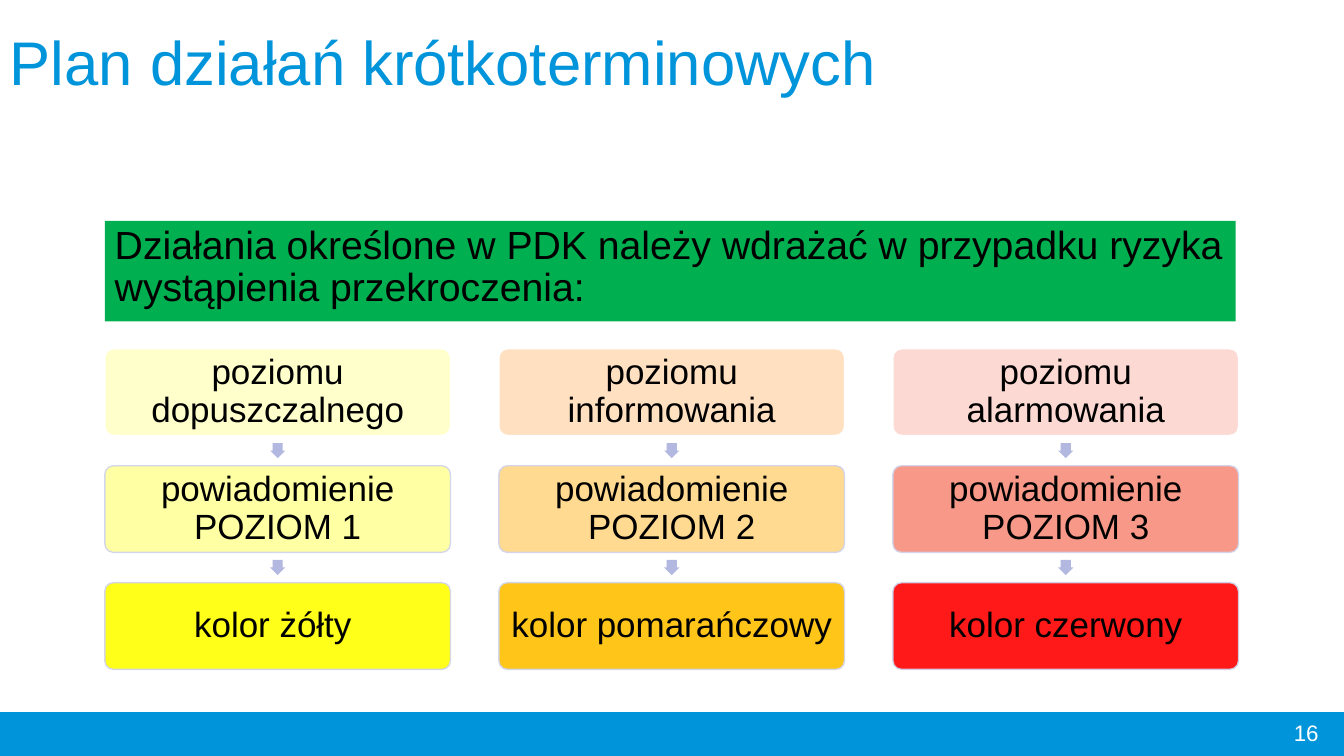
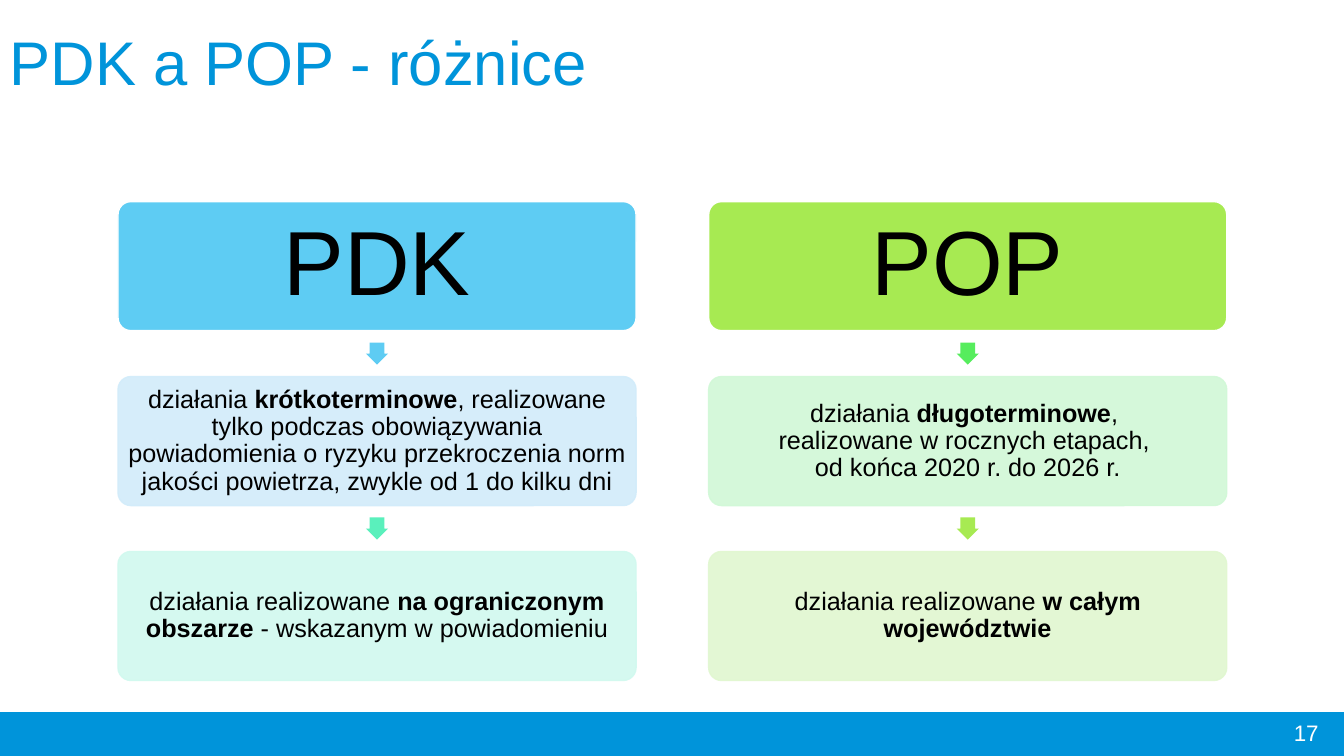
from lxml.etree import SubElement
from pptx import Presentation
from pptx.dml.color import RGBColor
from pptx.enum.shapes import MSO_SHAPE
from pptx.enum.text import MSO_ANCHOR, PP_ALIGN
from pptx.oxml.ns import qn
from pptx.util import Inches, Pt

BLUE, BLACK, WHITE = "0094DA", "000000", "FFFFFF"
GREEN, LILAC, PALE_LILAC = "00B050", "B2B8E0", "D0D3EB"


def rgb(color):
    return RGBColor.from_string(color)


def paint(color_format, color, alpha=100):
    """Colour a solid fill, with its opacity in percent."""
    color_format.fore_color.rgb = rgb(color)
    if alpha < 100:
        clr = color_format.fore_color._xFill.find(qn("a:srgbClr"))
        SubElement(clr, qn("a:alpha"), val=str(alpha * 1000))


def write(sp, text, size, color=BLACK, align=PP_ALIGN.LEFT,
          anchor=MSO_ANCHOR.MIDDLE, spacing=0.9, inset=None):
    """Write one paragraph; ** switches bold on and off, \n breaks the line."""
    tf = sp.text_frame
    tf.word_wrap = True
    tf.vertical_anchor = anchor
    if inset is not None:
        tf.margin_left = tf.margin_right = Inches(inset)
        tf.margin_top = tf.margin_bottom = Inches(inset)
    p = tf.paragraphs[0]
    p.alignment = align
    p.line_spacing = spacing
    for i, part in enumerate(text.split("**")):
        for j, line in enumerate(part.split("\n")):
            if j:
                p.add_line_break()
            if line:
                r = p.add_run()
                r.text = line
                r.font.name = "Arial"
                r.font.size = Pt(size)
                r.font.bold = i % 2 == 1
                r.font.color.rgb = rgb(color)


class Deck:
    """Shared style and current slide; lengths are percent of the slide."""

    def __init__(self):
        self.prs = Presentation()
        self.prs.slide_width = Inches(13.333)
        self.prs.slide_height = Inches(7.5)
        self.s = None

    def box(self, x, y, w, h):
        width, height = self.prs.slide_width, self.prs.slide_height
        return [round(share * side / 100) for share, side in
                zip((x, y, w, h), (width, height, width, height))]

    def shape(self, kind, box, fill, line=None, alpha=100):
        sp = self.s.shapes.add_shape(kind, *box)
        sp.shadow.inherit = False
        sp.fill.solid()
        paint(sp.fill, fill, alpha)
        if line:
            sp.line.width = Pt(1)
            sp.line.fill.solid()
            paint(sp.line.fill, line, alpha)
        else:
            sp.line.fill.background()
        return sp

    def text(self, box, text, size, **fmt):
        write(self.s.shapes.add_textbox(*box), text, size, **fmt)

    def slide(self, title, number):
        self.s = self.prs.slides.add_slide(self.prs.slide_layouts[6])
        self.shape(MSO_SHAPE.RECTANGLE, self.box(0, 94.27, 100, 5.73), BLUE, BLUE)
        self.text(self.box(0, 0.13, 76.65, 17.2), title, 44, color=BLUE)
        self.text(self.box(76.35, 94.27, 22.5, 5.33), str(number), 16,
                  color=WHITE, align=PP_ALIGN.RIGHT, spacing=1.0)

    def banner(self, text):
        sp = self.shape(MSO_SHAPE.RECTANGLE, self.box(7.8, 29.2, 84.15, 13.33), GREEN)
        write(sp, text, 28, anchor=MSO_ANCHOR.TOP)

    def card(self, box, text, size, fill, line, alpha, inset):
        sp = self.shape(MSO_SHAPE.ROUNDED_RECTANGLE, box, fill, line, alpha)
        sp.adjustments[0] = 0.1
        write(sp, text, size, align=PP_ALIGN.CENTER, inset=inset)

    def arrow(self, center_x, center_y, side, fill):
        box = (center_x - side // 2, center_y - side // 2, side, side)
        sp = self.shape(MSO_SHAPE.DOWN_ARROW, box, fill)
        sp.adjustments[0], sp.adjustments[1] = 0.667, 0.5

    def flow(self, columns, left, top, width, height, gap_x, gap_y, arrow_size,
             size, head_size, head_inset=0.03, line=None):
        """Columns of (text, fill, arrow colour) cards joined by arrows."""
        side = self.box(0, 0, 0, arrow_size)[3]
        gap = self.box(0, 0, 0, gap_y)[3]
        for col, cards in enumerate(columns):
            for row, (text, fill, arrow) in enumerate(cards):
                x, y, w, h = box = self.box(left + col * (width + gap_x),
                                            top + row * (height + gap_y),
                                            width, height)
                if row:
                    self.arrow(x + w // 2, y - gap // 2, side, arrow)
                    self.card(box, text, size, fill, line or fill, 90, 0.03)
                else:
                    self.card(box, text, head_size, fill, WHITE, 100, head_inset)


def main():
    deck = Deck()

    # Alert levels
    deck.slide("Plan działań krótkoterminowych", 16)
    deck.banner("Działania określone w PDK należy wdrażać w przypadku ryzyka "
                "wystąpienia przekroczenia:")
    levels = [
        ("dopuszczalnego", "żółty ", "FFFFCC", "FFFF99", "FFFF00"),
        ("informowania", "pomarańczowy", "FFE0C1", "FFD685", "FFC000"),
        ("alarmowania", "czerwony", "FCD9D3", "F78D7C", "FF0000"),
    ]
    columns = [[(f"poziomu {level}", light, None),
                (f"powiadomienie POZIOM {n}", medium, LILAC),
                (f"kolor {name}", strong, LILAC)]
               for n, (level, name, light, medium, strong) in enumerate(levels, 1)]
    deck.flow(columns, left=7.8, top=46.13, width=25.72, height=11.47,
              gap_x=3.6, gap_y=4, arrow_size=2, size=25, head_size=25,
              line=PALE_LILAC)

    # Comparison of the two plans
    deck.slide("PDK a POP - różnice", 17)
    plans = [
        [("PDK", "5ECCF3", None),
         ("działania **krótkoterminowe**, realizowane tylko podczas obowiązywania "
          "powiadomienia o ryzyku przekroczenia norm jakości powietrza, "
          "zwykle od 1 do kilku dni", "D2ECFA", "5ECCF3"),
         ("działania realizowane **na ograniczonym obszarze** - wskazanym "
          "w powiadomieniu", "D1F9EF", "5AF0BC")],
        [("POP", "A7EA52", None),
         ("działania **długoterminowe**, \nrealizowane w rocznych etapach, \n"
          "od końca 2020 r. do 2026 r.", "D1F8D7", "56ED5D"),
         ("działania realizowane **w całym województwie**", "E1F7D0", "A7EA52")],
    ]
    deck.flow(plans, left=8.78, top=26.67, width=38.55, height=17.07,
              gap_x=5.4, gap_y=6.07, arrow_size=2.93, size=18, head_size=65,
              head_inset=0.09)

    deck.prs.save("out.pptx")


if __name__ == "__main__":
    main()
